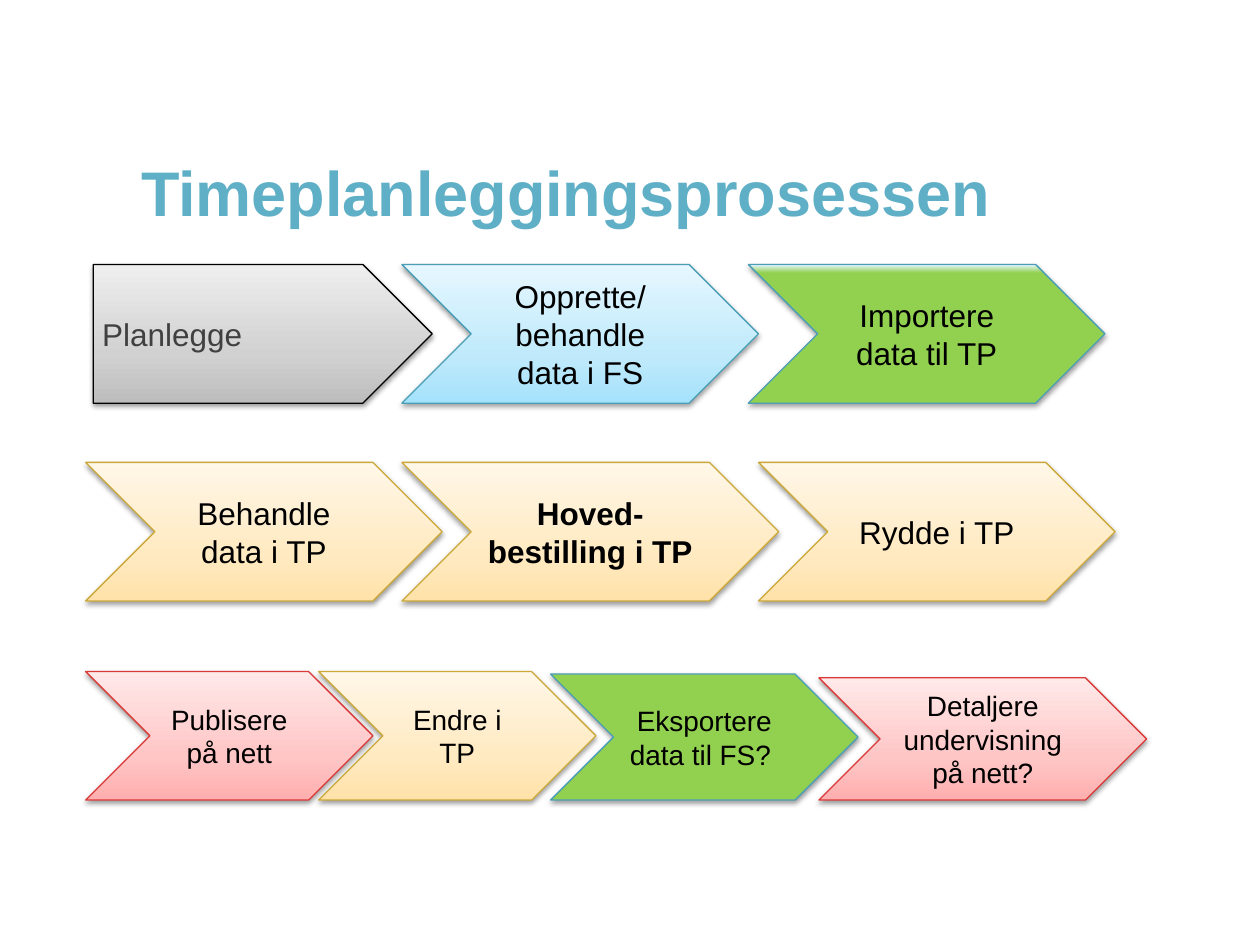
from lxml import etree
from pptx import Presentation
from pptx.dml.color import RGBColor
from pptx.enum.shapes import MSO_SHAPE as Shape
from pptx.enum.text import MSO_ANCHOR as Anchor, PP_ALIGN as Align
from pptx.oxml.ns import qn
from pptx.util import Inches, Pt

C = {"title": "5FAFC7", "text": "000000", "muted": "404040", "green": "92D050"}

STYLES = {
    "gray": ([(0, "BDBDBD"), (35, "D1D1D1"), (100, "EEEEEE")], "000000"),
    "blue": ([(0, "A5E2FC"), (35, "C0EAFB"), (100, "E6F7FF")], "4A9EB6"),
    "yellow": ([(0, "FFE2A9"), (35, "FFEAC2"), (100, "FFF7E8")], "CCA93A"),
    "red": ([(0, "FFAFAF"), (35, "FFC6C6"), (100, "FFE9E9")], "DA3A38"),
    "green_fade": ([(0, C["green"]), (94, C["green"]), (100, "E6F7FF")], "4A9EB6"),
    "green": ([], "4A9EB6"),
}

TITLE = "Timeplanleggingsprosessen"
START = ("Planlegge", "gray", 0.74, 2.1, 2.69, 1.1)
ROWS = [
    (18, 3.2, 1.1, [
        ("Opprette/ behandle data i FS", "blue", 3.19, 2.83, 1.1),
        ("Importere data til TP", "green_fade", 5.94, 2.83, 1.1),
    ]),
    (18, 4.77, 1.1, [
        ("Behandle data i TP", "yellow", 0.68, 2.83, 1.1),
        ("Hoved-bestilling i TP", "yellow", 3.19, 2.99, 1.1),
        ("Rydde i TP", "yellow", 6.02, 2.83, 1.1),
    ]),
    (16, 6.35, 1.02, [
        ("Publisere på nett", "red", 0.68, 2.28, 1.02),
        ("Detaljere undervisning\npå nett?", "red", 6.5, 2.6, 0.97),
        ("Endre i TP", "yellow", 2.53, 2.2, 1.02),
        ("Eksportere data til FS? ", "green", 4.37, 2.44, 1),
    ]),
]
BOLD = {"Hoved-bestilling i TP"}


def add_text(p, text, size, color, bold=False):
    r = p.add_run()
    r.text = text
    r.font.name = "Arial"
    r.font.size = Pt(size)
    r.font.bold = bold
    r.font.color.rgb = RGBColor.from_string(color)


def set_gradient(sp, stops):
    sp.fill.gradient()
    sp.fill.gradient_angle = 90
    gs_list = next(sp._element.spPr.iter(qn("a:gsLst")))
    for gs in list(gs_list):
        gs_list.remove(gs)
    for pos, color in stops:
        gs = etree.SubElement(gs_list, qn("a:gs"), pos=str(pos * 1000))
        etree.SubElement(gs, qn("a:srgbClr"), val=color)


def set_shadow(sp):
    sp.shadow.inherit = False
    effects = sp._element.spPr.find(qn("a:effectLst"))
    shadow = etree.SubElement(effects, qn("a:outerShdw"), blurRad=str(Pt(3.1)),
                              dist=str(Pt(1.6)), dir="5400000", rotWithShape="0")
    color = etree.SubElement(shadow, qn("a:srgbClr"), val="000000")
    etree.SubElement(color, qn("a:alpha"), val="38000")


def add_step(s, preset, text, style, box, size, color, align):
    stops, line = STYLES[style]
    sp = s.shapes.add_shape(preset, *map(Inches, box))
    if stops:
        set_gradient(sp, stops)
    else:
        sp.fill.solid()
        sp.fill.fore_color.rgb = RGBColor.from_string(C[style])
    sp.line.color.rgb = RGBColor.from_string(line)
    sp.line.width = Pt(0.75)
    set_shadow(sp)
    tf = sp.text_frame
    tf.word_wrap = True
    tf.vertical_anchor = Anchor.MIDDLE
    for i, part in enumerate(text.split("\n")):
        p = tf.add_paragraph() if i else tf.paragraphs[0]
        p.alignment = align
        add_text(p, part, size, color, text in BOLD)
    return tf


def set_margins(tf, left):
    tf.margin_left = Inches(left)
    tf.margin_right = tf.margin_top = tf.margin_bottom = 0


def main():
    prs = Presentation()
    prs.slide_width, prs.slide_height = Inches(10), Inches(7.5)
    s = prs.slides.add_slide(prs.slide_layouts[6])

    tf = s.shapes.add_textbox(*map(Inches, (1.12, 1.11, 8.06, 0.71))).text_frame
    tf.word_wrap = True
    tf.vertical_anchor = Anchor.BOTTOM
    set_margins(tf, 0)
    tf.paragraphs[0].line_spacing = Pt(43.2)
    add_text(tf.paragraphs[0], TITLE, 36, C["title"], True)

    text, style, *box = START
    tf = add_step(s, Shape.PENTAGON, text, style, box, 18, C["muted"], Align.LEFT)
    set_margins(tf, 0.07)

    for size, bottom, _, steps in ROWS:
        for text, style, left, width, height in steps:
            box = (left, bottom - height, width, height)
            add_step(s, Shape.CHEVRON, text, style, box, size, C["text"], Align.CENTER)

    prs.save("out.pptx")


if __name__ == "__main__":
    main()
